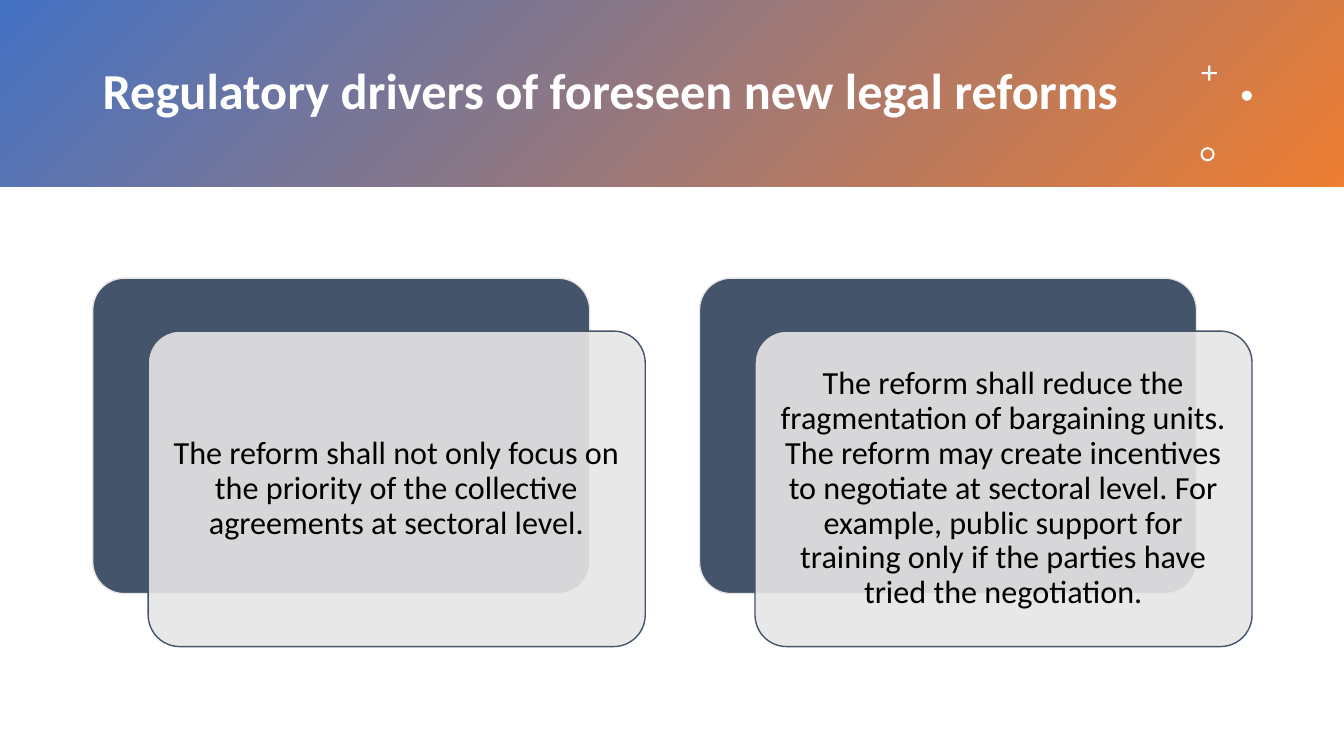
from dataclasses import dataclass

from lxml import etree
from pptx import Presentation, util as u
from pptx.dml.color import RGBColor
from pptx.enum import shapes, text
from pptx.oxml import ns
from pptx.shapes.autoshape import Shape
from pptx.slide import Slide

SLIDE_WIDTH = u.Inches(13.333)
SLIDE_HEIGHT = u.Inches(7.5)
GRID = 100


@dataclass(frozen=True)
class Theme:
    font: str = "Calibri"
    title_size: int = 36
    body_size: int = 23
    white: str = "FFFFFF"
    black: str = "000000"
    blue: str = "4472C4"
    orange: str = "ED7D31"
    slate: str = "44546A"
    mist: str = "E7E6E6"
    card_opacity: int = 90


@dataclass(frozen=True)
class Area:
    column: float
    row: float
    columns: float
    rows: float

    def shifted(self, columns: float, rows: float = 0) -> "Area":
        return Area(self.column + columns, self.row + rows, self.columns, self.rows)

    def lengths(self) -> tuple[int, int, int, int]:
        return (
            round(self.column * SLIDE_WIDTH / GRID),
            round(self.row * SLIDE_HEIGHT / GRID),
            round(self.columns * SLIDE_WIDTH / GRID),
            round(self.rows * SLIDE_HEIGHT / GRID),
        )


@dataclass(frozen=True)
class Ornament:
    kind: shapes.MSO_SHAPE
    area: Area
    adjustment: float | None = None


THEME = Theme()
BANNER = Area(0, 0, 100, 24.7)
TITLE_AREA = Area(6.9, 4.4, 80.63, 15.9)
TITLE = "Regulatory drivers of foreseen new legal reforms"

ORNAMENTS = [
    Ornament(shapes.MSO_SHAPE.CROSS, Area(89.4, 8.67, 1.15, 2), 0.44),
    Ornament(shapes.MSO_SHAPE.OVAL, Area(92.4, 12, 0.75, 1.33)),
    Ornament(shapes.MSO_SHAPE.DONUT, Area(89.33, 19.47, 1.05, 1.87), 0.14),
]

FIRST_CARD = Area(6.9, 36.8, 36.98, 41.73)
CARD_PITCH = 45.15
FRONT_SHIFT = (4.13, 7)
CARD_ROUNDING = 0.1
DRIVERS = [
    "The reform shall not only focus on the priority of the collective "
    "agreements at sectoral level.",
    "The reform shall reduce the fragmentation of bargaining units. "
    "The reform may create incentives to negotiate at sectoral level. "
    "For example, public support for training only if the parties have "
    "tried the negotiation.",
]


def rgb(value: str) -> RGBColor:
    return RGBColor.from_string(value)


def add_plain_shape(slide: Slide, kind: shapes.MSO_SHAPE, area: Area, fill: str,
                    adjustment: float | None = None) -> Shape:
    shape = slide.shapes.add_shape(kind, *area.lengths())
    shape.shadow.inherit = False
    shape.fill.solid()
    shape.fill.fore_color.rgb = rgb(fill)
    shape.line.fill.background()
    if adjustment is not None:
        shape.adjustments[0] = adjustment
    return shape


def write(shape: Shape, words: str, size: int, color: str,
          alignment: text.PP_ALIGN, bold: bool = False) -> None:
    frame = shape.text_frame
    frame.word_wrap = True
    frame.vertical_anchor = text.MSO_ANCHOR.MIDDLE
    frame.text = words
    paragraph = frame.paragraphs[0]
    paragraph.alignment = alignment
    paragraph.line_spacing = 0.9
    font = paragraph.runs[0].font
    font.name = THEME.font
    font.size = u.Pt(size)
    font.bold = bold
    font.color.rgb = rgb(color)


def add_banner(slide: Slide) -> None:
    banner = add_plain_shape(slide, shapes.MSO_SHAPE.RECTANGLE, BANNER, THEME.blue)
    banner.fill.gradient()
    banner.fill.gradient_angle = 315
    for stop, color, position in zip(banner.fill.gradient_stops,
                                     (THEME.blue, THEME.orange), (0, 1)):
        stop.color.rgb = rgb(color)
        stop.position = position
    title = slide.shapes.add_textbox(*TITLE_AREA.lengths())
    write(title, TITLE, THEME.title_size, THEME.white, text.PP_ALIGN.LEFT, bold=True)
    for ornament in ORNAMENTS:
        add_plain_shape(slide, ornament.kind, ornament.area, THEME.white,
                        ornament.adjustment)


def add_card(slide: Slide, area: Area, fill: str, outline: str) -> Shape:
    card = add_plain_shape(slide, shapes.MSO_SHAPE.ROUNDED_RECTANGLE, area, fill,
                           CARD_ROUNDING)
    card.line.color.rgb = rgb(outline)
    card.line.width = u.Pt(1)
    return card


def set_opacity(shape: Shape, percent: int) -> None:
    color = shape.fill._xPr.find(ns.qn("a:solidFill"))[0]
    etree.SubElement(color, ns.qn("a:alpha"), val=str(percent * 1000))


def add_driver(slide: Slide, area: Area, words: str) -> None:
    add_card(slide, area, THEME.slate, THEME.mist)
    front = add_card(slide, area.shifted(*FRONT_SHIFT), THEME.mist, THEME.slate)
    set_opacity(front, THEME.card_opacity)
    frame = front.text_frame
    frame.margin_left = frame.margin_right = u.Inches(0.1)
    frame.margin_top = frame.margin_bottom = u.Inches(0.1)
    write(front, words, THEME.body_size, THEME.black, text.PP_ALIGN.CENTER)


def main() -> None:
    deck = Presentation()
    deck.slide_width = SLIDE_WIDTH
    deck.slide_height = SLIDE_HEIGHT
    slide = deck.slides.add_slide(deck.slide_layouts[6])
    add_banner(slide)
    for index, words in enumerate(DRIVERS):
        add_driver(slide, FIRST_CARD.shifted(index * CARD_PITCH), words)
    deck.save("out.pptx")


if __name__ == "__main__":
    main()
